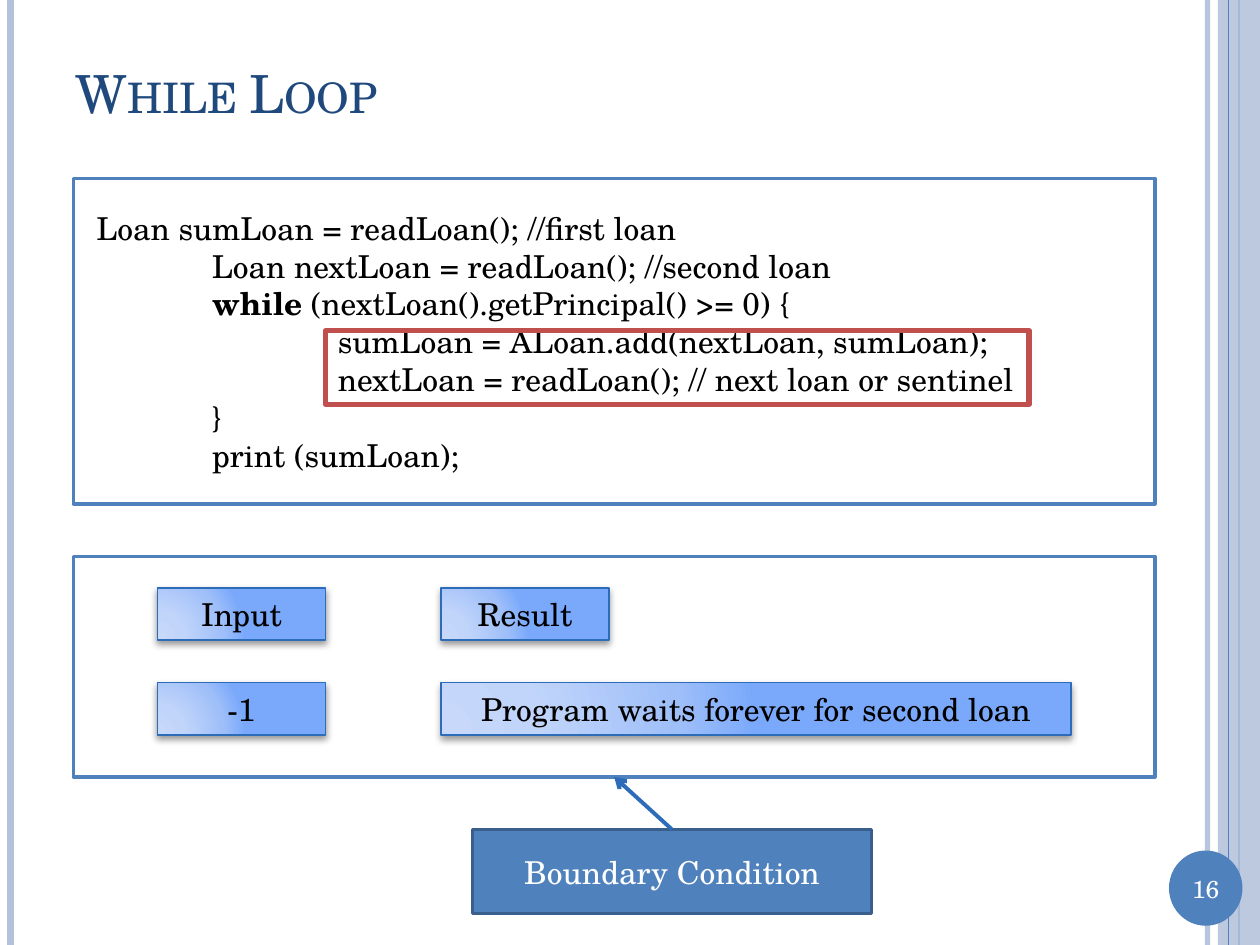
from lxml.etree import SubElement
from pptx import Presentation
from pptx.dml.color import RGBColor
from pptx.enum.shapes import MSO_CONNECTOR as Connector, MSO_SHAPE as Shape
from pptx.enum.text import MSO_ANCHOR as Anchor, MSO_AUTO_SIZE as AutoSize, PP_ALIGN as Align
from pptx.oxml import parse_xml
from pptx.oxml.ns import nsdecls, qn
from pptx.util import Pt

FONT = "TeX Gyre Schola"
COLORS = {
    "accent": "4F81BD", "rail": "B3C1DB", "title": "1F497D", "edge": "2C6CB9",
    "callout_edge": "3A5F8C", "highlight": "C0504D", "black": "000000", "white": "FFFFFF",
}
GRADIENT = {0: "C7D8FB", 30: "C1D5FA", 75: "9FBFF9", 100: "7AA9FB"}
TAB = 72

# Indent in points, then (text, bold) runs
CODE = [
    (6, [("Loan sumLoan = readLoan(); //first loan", False)]),
    (TAB, [("Loan nextLoan = readLoan(); //second loan", False)]),
    (TAB, [("while", True), (" (nextLoan().getPrincipal() >= 0) {", False)]),
    (2 * TAB, [("sumLoan = ALoan.add(nextLoan, sumLoan);", False)]),
    (2 * TAB, [("nextLoan = readLoan(); // next loan or sentinel", False)]),
    (TAB, [("}", False)]),
    (TAB, [("print (sumLoan);", False)]),
]


def rgb(name):
    return RGBColor.from_string(COLORS[name])


def set_alpha(fill_parent, percent):
    for color in fill_parent.iter(qn("a:srgbClr")):
        SubElement(color, qn("a:alpha")).set("val", str(percent * 1000))


def add_run(paragraph, text, color, **format_values):
    run = paragraph.add_run()
    run.text = text
    run.font.color.rgb = rgb(color)
    for name, value in {"name": FONT, "size": Pt(18), **format_values}.items():
        setattr(run.font, name, value)
    return run


def add_label(shape, text, color, size=18):
    frame = shape.text_frame
    frame.word_wrap = True
    frame.vertical_anchor = Anchor.MIDDLE
    paragraph = frame.paragraphs[0]
    paragraph.alignment = Align.CENTER
    add_run(paragraph, text, color, size=Pt(size))


def add_box(slide, left, top, width, height, fill=None, edge=None, weight=2, kind=Shape.RECTANGLE):
    box = slide.shapes.add_shape(kind, Pt(left), Pt(top), Pt(width), Pt(height))
    box.shadow.inherit = False
    if fill:
        box.fill.solid()
        box.fill.fore_color.rgb = rgb(fill)
    else:
        box.fill.background()
    if edge:
        box.line.color.rgb = rgb(edge)
        box.line.width = Pt(weight)
    else:
        box.line.fill.background()
    return box


def add_line(slide, x1, y1, x2, y2, color, weight):
    line = slide.shapes.add_connector(Connector.STRAIGHT, Pt(x1), Pt(y1), Pt(x2), Pt(y2))
    line.line.color.rgb = rgb(color)
    line.line.width = Pt(weight)
    SubElement(line._element.spPr, qn("a:effectLst"))
    return line


def add_cell(slide, left, top, width, text):
    """Add a glossy box with a radial gradient and a soft shadow."""
    cell = add_box(slide, left, top, width, 30, edge="edge", weight=1)
    properties = cell._element.spPr
    stops = "".join(f'<a:gs pos="{position * 1000}"><a:srgbClr val="{color}"/></a:gs>'
                    for position, color in GRADIENT.items())
    properties.replace(properties.find(qn("a:noFill")), parse_xml(
        f'<a:gradFill {nsdecls("a")} rotWithShape="1"><a:gsLst>{stops}</a:gsLst>'
        '<a:path path="circle"><a:fillToRect l="5000" t="100000" r="120000" b="10000"/>'
        '</a:path></a:gradFill>'))
    properties.find(qn("a:effectLst")).append(parse_xml(
        f'<a:outerShdw {nsdecls("a")} blurRad="{Pt(4)}" dist="{Pt(2)}" dir="5400000" '
        'rotWithShape="0"><a:srgbClr val="000000"><a:alpha val="40000"/></a:srgbClr>'
        '</a:outerShdw>'))
    add_label(cell, text, "black")


def add_side_rails(slide):
    inner = add_line(slide, 690, 0, 690, 540, "rail", 3)
    set_alpha(inner._element.spPr, 93)
    add_line(slide, 6, 0, 6, 540, "rail", 4.5)
    add_line(slide, 708, 0, 708, 540, "accent", 1.5)
    band = add_box(slide, 696, 0, 24, 540, fill="rail")
    set_alpha(band._element.spPr, 87)
    add_line(slide, 702, 0, 702, 540, "accent", 0.75)


def add_page_number(slide, number):
    add_box(slide, 668, 486, 42, 43, fill="accent", kind=Shape.OVAL)
    label = slide.shapes.add_textbox(Pt(668), Pt(495.5), Pt(42), Pt(24.5))
    add_label(label, number, "white", 14)


def format_title(title, text):
    for name, value in {"left": 36, "top": 21.6, "width": 624, "height": 62.4}.items():
        setattr(title, name, Pt(value))
    frame = title.text_frame
    frame.auto_size = AutoSize.NONE
    frame.vertical_anchor = Anchor.MIDDLE
    paragraph = frame.paragraphs[0]
    paragraph.alignment = Align.LEFT
    run = add_run(paragraph, text, "title", size=Pt(30))
    run.font._element.set("cap", "small")


def add_code(slide):
    panel = add_box(slide, 42, 102, 618, 186, "white", "accent")
    frame = panel.text_frame
    frame.word_wrap = True
    frame.vertical_anchor = Anchor.MIDDLE
    for index, (indent, runs) in enumerate(CODE):
        paragraph = frame.add_paragraph() if index else frame.paragraphs[0]
        paragraph.alignment = Align.LEFT
        paragraph._p.get_or_add_pPr().set("marL", str(Pt(indent)))
        for text, bold in runs:
            add_run(paragraph, text, "black", bold=bold)
    add_box(slide, 186, 189, 402, 42, edge="highlight", weight=3)


def add_results(slide):
    add_box(slide, 42, 318, 618, 126, "white", "accent")
    rows = [("Input", "Result", 96), ("-1", "Program waits forever for second loan", 360)]
    for row, (given, result, result_width) in enumerate(rows):
        top = 336 + 54 * row
        add_cell(slide, 90, top, 96, given)
        add_cell(slide, 252, top, result_width, result)


def add_callout(slide):
    callout = add_box(slide, 270, 474, 228, 48, "accent", "callout_edge")
    add_label(callout, "Boundary Condition", "white")
    arrow = add_line(slide, 384, 474, 351, 444, "edge", 2.25)
    SubElement(arrow.line._get_or_add_ln(), qn("a:tailEnd")).set("type", "arrow")


def main():
    presentation = Presentation()
    presentation.slide_width, presentation.slide_height = Pt(720), Pt(540)
    slide = presentation.slides.add_slide(presentation.slide_layouts[5])
    add_side_rails(slide)
    add_page_number(slide, "16")
    format_title(slide.shapes.title, "While Loop")
    add_code(slide)
    add_results(slide)
    add_callout(slide)
    presentation.save("out.pptx")


if __name__ == "__main__":
    main()
